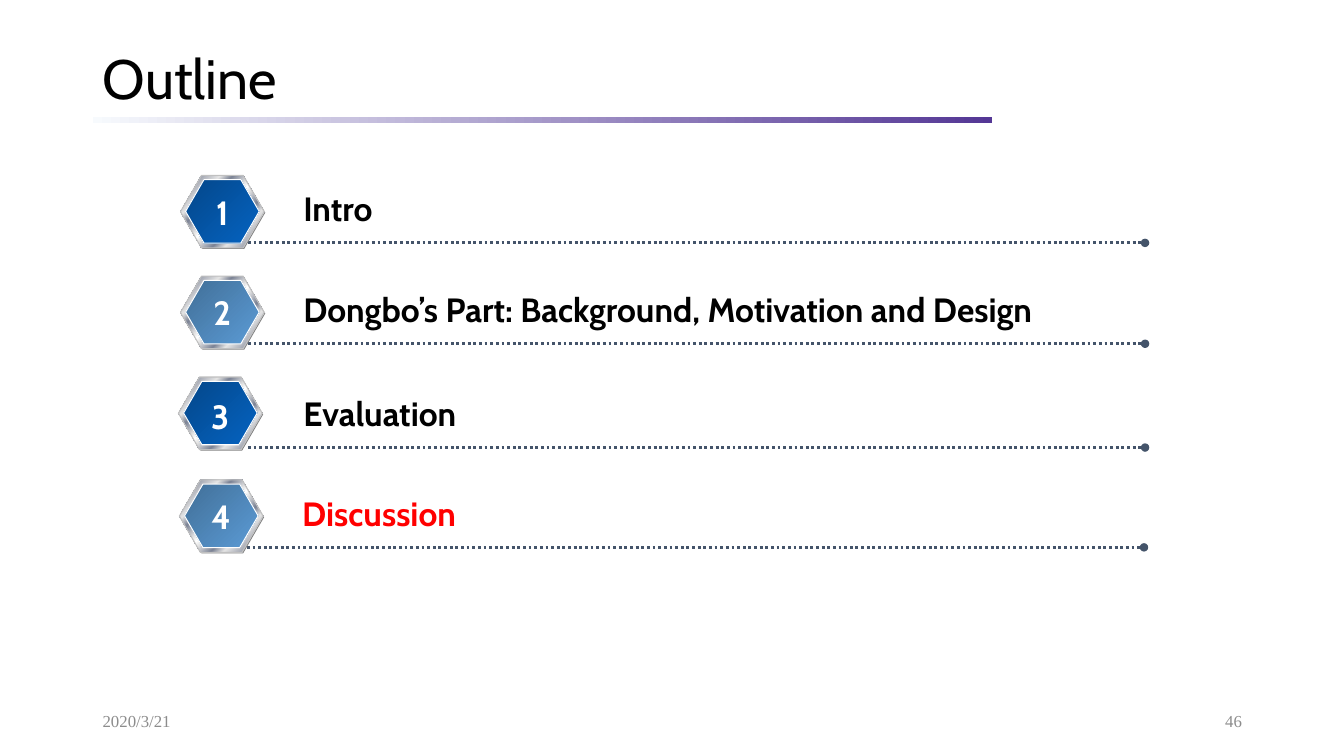
"""Build the outline slide with four numbered sections."""
from dataclasses import dataclass

from lxml import etree
from pptx import Presentation
from pptx.dml.color import RGBColor
from pptx.enum.dml import MSO_LINE
from pptx.enum.shapes import MSO_CONNECTOR, MSO_SHAPE
from pptx.enum.text import MSO_ANCHOR, MSO_AUTO_SIZE, PP_ALIGN
from pptx.oxml.ns import qn
from pptx.util import Emu, Inches, Pt

SLIDE_WIDTH, SLIDE_HEIGHT = Inches(13.333), Inches(7.5)
HEXAGON, RECTANGLE = MSO_SHAPE.HEXAGON, MSO_SHAPE.RECTANGLE
STRAIGHT, DOTTED = MSO_CONNECTOR.STRAIGHT, MSO_LINE.ROUND_DOT
LEFT, CENTER, RIGHT = PP_ALIGN.LEFT, PP_ALIGN.CENTER, PP_ALIGN.RIGHT
TOP, MIDDLE = MSO_ANCHOR.TOP, MSO_ANCHOR.MIDDLE
NO_AUTOFIT = MSO_AUTO_SIZE.NONE

HEADING_FONT, FOOTER_FONT = "Cabin", "Times New Roman"
COLORS = {
    "text": "000000", "current": "FF0000", "white": "FFFFFF",
    "footer": "8C8C8C", "dots": "44546A", "shade": "808080",
    "rim": "C0C0C0", "silver": "E6E6E6", "steel": "7D8496",
    "navy": "04478A", "blue": "0563C1", "slate": "416F98", "sky": "5B9BD5",
    "bar_start": "F7FAFD", "bar_end": "543795",
}
METAL = [(0, "silver"), (7, "steel"), (26, "silver"), (34, "steel"),
         (46, "silver"), (50, "white"), (54, "silver"), (66, "steel"),
         (74, "silver"), (93, "steel"), (100, "silver")]
FACES = [[(0, "navy"), (100, "blue")], [(0, "slate"), (100, "sky")]]
LABEL_LEFT, LABEL_RISE, TEXT_HEIGHT = 21.83, 7.87, 6.67
NUMBER_INDENT, NUMBER_RISE, NUMBER_WIDTH = 1.65, 7.47, 2.93
DOTS_LEFT, DOTS_RIGHT = 18.45, 85.2


@dataclass
class Section:
    """One outline entry, with places in percent of the slide."""
    label: str
    label_width: float
    badge_left: float
    badge_top: float
    dots_top: float
    color: str = "text"
    shift: float = 0


SECTIONS = [
    Section("Intro", 7.43, 13.43, 23.2, 32.13),
    Section("Dongbo’s Part: Background, Motivation and Design",
            62.1, 13.43, 36.53, 45.47),
    Section("Evaluation", 13.95, 13.28, 49.87, 59.2),
    Section("Discussion", 13.88, 13.35, 63.47, 72.4, "current", -0.08),
]


def across(percent: float) -> Emu:
    """Turn a share of the slide's width into a length."""
    return Emu(round(SLIDE_WIDTH * percent / 100))


def down(percent: float) -> Emu:
    """Turn a share of the slide's height into a length."""
    return Emu(round(SLIDE_HEIGHT * percent / 100))


def place(left: float, top: float, width: float, height: float) -> tuple:
    """Turn percentages into a position and size."""
    return across(left), down(top), across(width), down(height)


def rgb(name: str) -> RGBColor:
    """Look up a named colour."""
    return RGBColor.from_string(COLORS[name])


def write(frame, text: str, *, size: float = 24, font: str = HEADING_FONT,
          color: str = "text", bold: bool = False, align=LEFT, anchor=TOP,
          spacing: float = 1.0) -> None:
    """Write one formatted paragraph into a text frame."""
    frame.word_wrap = True
    frame.auto_size = NO_AUTOFIT
    frame.vertical_anchor = anchor
    frame.text = text
    paragraph = frame.paragraphs[0]
    paragraph.alignment = align
    paragraph.line_spacing = spacing
    paragraph.font.size = Pt(size)
    paragraph.font.name = font
    paragraph.font.bold = bold
    paragraph.font.color.rgb = rgb(color)


def add_figure(shapes, kind, box: tuple, stops: list, angle: float = 0,
               outline: str = "") -> None:
    """Add a preset shape with a plain or gradient fill."""
    figure = shapes.add_shape(kind, *box)
    figure.shadow.inherit = False
    if kind == HEXAGON:
        figure.adjustments[0] = 0.29
    if len(stops) == 1:
        figure.fill.solid()
        figure.fill.fore_color.rgb = rgb(stops[0][1])
    else:
        figure.fill.gradient()
        figure.fill.gradient_angle = angle
        stop_list = figure._element.spPr.find(qn("a:gradFill")).find(qn("a:gsLst"))
        for old_stop in list(stop_list):
            stop_list.remove(old_stop)
        for position, name in stops:
            stop = etree.SubElement(stop_list, qn("a:gs"), pos=str(position * 1000))
            etree.SubElement(stop, qn("a:srgbClr"), val=COLORS[name])
    if outline:
        figure.line.color.rgb = rgb(outline)
        figure.line.width = Pt(0.75)
    else:
        figure.line.fill.background()


def add_dots(shapes, left: float, right: float, top: float) -> None:
    """Add a dotted line that ends in a round dot."""
    dots = shapes.add_connector(STRAIGHT, across(left), down(top),
                                across(right), down(top))
    dots.line.color.rgb = rgb("dots")
    dots.line.width = Pt(2)
    dots.line.dash_style = DOTTED
    etree.SubElement(dots.line._get_or_add_ln(), qn("a:tailEnd"), type="oval")
    etree.SubElement(dots._element.spPr, qn("a:effectLst"))


def add_badge(shapes, left: float, top: float, face: list) -> None:
    """Add a metal-rimmed hexagon with its shade."""
    badge = shapes.add_group_shape().shapes
    add_figure(badge, HEXAGON, place(left + 0.08, top + 0.13, 6.23, 9.6),
               [(0, "shade")])
    add_figure(badge, HEXAGON, place(left, top, 6.23, 9.6), METAL, 315, "rim")
    add_figure(badge, HEXAGON, place(left + 0.38, top + 0.57, 5.48, 8.4),
               face, 315, "white")


def add_section(shapes, number: int, section: Section) -> None:
    """Add the dotted line, badge, number and label of one section."""
    add_dots(shapes, DOTS_LEFT + section.shift, DOTS_RIGHT + section.shift,
             section.dots_top)
    add_badge(shapes, section.badge_left, section.badge_top,
              FACES[(number - 1) % len(FACES)])
    digit = shapes.add_textbox(*place(section.badge_left + NUMBER_INDENT,
                                      section.dots_top - NUMBER_RISE,
                                      NUMBER_WIDTH, TEXT_HEIGHT))
    write(digit.text_frame, str(number), color="white", bold=True, align=CENTER)
    label = shapes.add_textbox(*place(LABEL_LEFT + section.shift,
                                      section.dots_top - LABEL_RISE,
                                      section.label_width, TEXT_HEIGHT))
    write(label.text_frame, section.label, color=section.color, bold=True)


def main() -> None:
    """Build and save the slide."""
    deck = Presentation()
    deck.slide_width, deck.slide_height = SLIDE_WIDTH, SLIDE_HEIGHT
    slide = deck.slides.add_slide(deck.slide_layouts[5])
    shapes = slide.shapes

    add_figure(shapes, RECTANGLE, place(6.9, 15.47, 66.9, 0.75),
               [(0, "bar_start"), (100, "bar_end")])
    heading = shapes.title
    heading.left, heading.top, heading.width, heading.height = place(
        6.9, 5.73, 86.25, 10)
    write(heading.text_frame, "Outline", size=39.6, anchor=MIDDLE, spacing=0.9)

    for left, text, align in ((6.9, "2020/3/21", LEFT), (70.65, "46", RIGHT)):
        footer = shapes.add_textbox(*place(left, 92.67, 22.5, 5.33))
        write(footer.text_frame, text, size=12, font=FOOTER_FONT,
              color="footer", align=align, anchor=MIDDLE)

    for number, section in enumerate(SECTIONS, start=1):
        add_section(shapes, number, section)

    deck.save("out.pptx")


if __name__ == "__main__":
    main()
